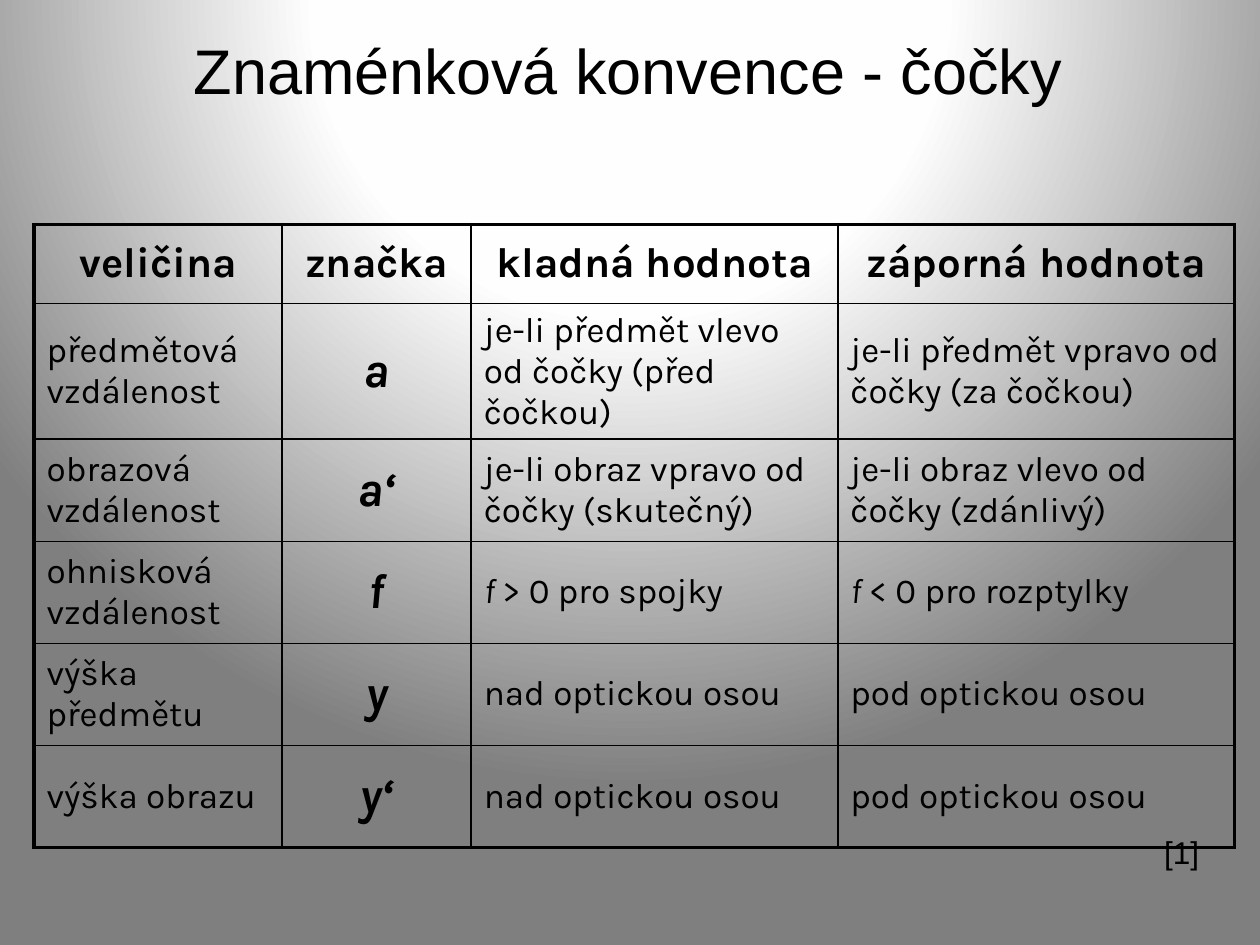
from pptx import Presentation
from pptx.dml.color import RGBColor
from pptx.enum.text import MSO_ANCHOR, PP_ALIGN
from pptx.oxml import parse_xml
from pptx.oxml.ns import nsdecls
from pptx.util import Inches, Pt

HEAD = ["veličina", "značka", "kladná hodnota", "záporná hodnota"]
BODY = [
    ["předmětová vzdálenost", "a",
     "je-li předmět vlevo od čočky (před čočkou)",
     "je-li předmět vpravo od čočky (za čočkou)"],
    ["obrazová vzdálenost", "a‘",
     "je-li obraz vpravo od čočky (skutečný)",
     "je-li obraz vlevo od čočky (zdánlivý)"],
    ["ohnisková vzdálenost", "f",
     ("f ", "> 0 pro spojky"), ("f ", "< 0 pro rozptylky")],
    ["výška předmětu", "y", "nad optickou osou", "pod optickou osou"],
    ["výška obrazu", "y‘", "nad optickou osou", "pod optickou osou"],
]
LABELS = [
    ("Znaménková konvence - čočky", (0.12, 0.2, 9.73, 0.7), "title", PP_ALIGN.CENTER),
    ("[1]", (9.14, 6.56, 0.69, 0.4), "note", PP_ALIGN.LEFT),
]
COLS = [1.97, 1.5, 2.91, 3.15]
ROWS = [0.63] + [0.81] * len(BODY)
THEME = {
    "ink": "000000", "font": "Arial", "grid": "Karla",
    "title": 36, "note": 18, "head": 24, "sign": 28, "body": 20,
    "thin": 1, "thick": 2.25,
    "stops": [(0, "FFFFFF"), (40, "FEFEFE"), (100, "7F7F7F")],
}


def paint(slide):
    """Give the slide its round gradient background."""
    stops = "".join(
        f'<a:gs pos="{pos * 1000}"><a:srgbClr val="{tone}"/></a:gs>'
        for pos, tone in THEME["stops"])
    slide.element.cSld.insert(0, parse_xml(
        f'<p:bg {nsdecls("p", "a")}><p:bgPr><a:gradFill rotWithShape="1">'
        f'<a:gsLst>{stops}</a:gsLst><a:path path="circle">'
        '<a:fillToRect l="50000" t="-80000" r="50000" b="180000"/>'
        '</a:path></a:gradFill><a:effectLst/></p:bgPr></p:bg>'))


def style(para, face, size, align, bold=False, italic=None):
    """Set the font and alignment of one paragraph."""
    para.alignment = align
    font = para.font
    font.name, font.size = face, Pt(size)
    font.bold, font.italic = bold, italic
    font.color.rgb = RGBColor.from_string(THEME["ink"])


def edge(cell, outer):
    """Draw four cell borders, thick on the outer sides."""
    props = cell._tc.get_or_add_tcPr()
    for spot, side in enumerate("LRTB"):
        width = Pt(THEME["thick" if side in outer else "thin"])
        props.insert(spot, parse_xml(
            f'<a:ln{side} {nsdecls("a")} w="{width}"><a:solidFill>'
            f'<a:srgbClr val="{THEME["ink"]}"/></a:solidFill></a:ln{side}>'))


def fill(cell, text, row, col):
    """Write one table cell."""
    cell.fill.background()
    cell.vertical_anchor = MSO_ANCHOR.MIDDLE
    para = cell.text_frame.paragraphs[0]
    role = "head" if row == 0 else "sign" if col == 1 else "body"
    align = PP_ALIGN.LEFT if role == "body" else PP_ALIGN.CENTER
    style(para, THEME["grid"], THEME[role], align, role != "body", role == "sign")
    if isinstance(text, tuple):
        for part, slant in zip(text, (True, False)):
            run = para.add_run()
            run.text, run.font.italic = part, slant
    else:
        para.add_run().text = text
    ends = {"L": col == 0, "R": col == len(COLS) - 1,
            "T": row == 0, "B": row == len(ROWS) - 1}
    edge(cell, [side for side, last in ends.items() if last])


def grid(slide):
    """Build the table of sign rules."""
    box = map(Inches, (0.27, 1.78, sum(COLS), sum(ROWS)))
    table = slide.shapes.add_table(len(ROWS), len(COLS), *box).table
    table.first_row = table.horz_banding = False
    for col, width in zip(table.columns, COLS):
        col.width = Inches(width)
    for row, high in zip(table.rows, ROWS):
        row.height = Inches(high)
    for row, line in enumerate([HEAD] + BODY):
        for col, text in enumerate(line):
            fill(table.cell(row, col), text, row, col)


def main():
    """Build and save the slide."""
    deck = Presentation()
    deck.slide_width, deck.slide_height = Inches(10), Inches(7.5)
    slide = deck.slides.add_slide(deck.slide_layouts[6])
    paint(slide)
    grid(slide)
    for text, box, role, align in LABELS:
        frame = slide.shapes.add_textbox(*map(Inches, box)).text_frame
        frame.word_wrap = True
        frame.text = text
        style(frame.paragraphs[0], THEME["font"], THEME[role], align)
    deck.save("out.pptx")


if __name__ == "__main__":
    main()
